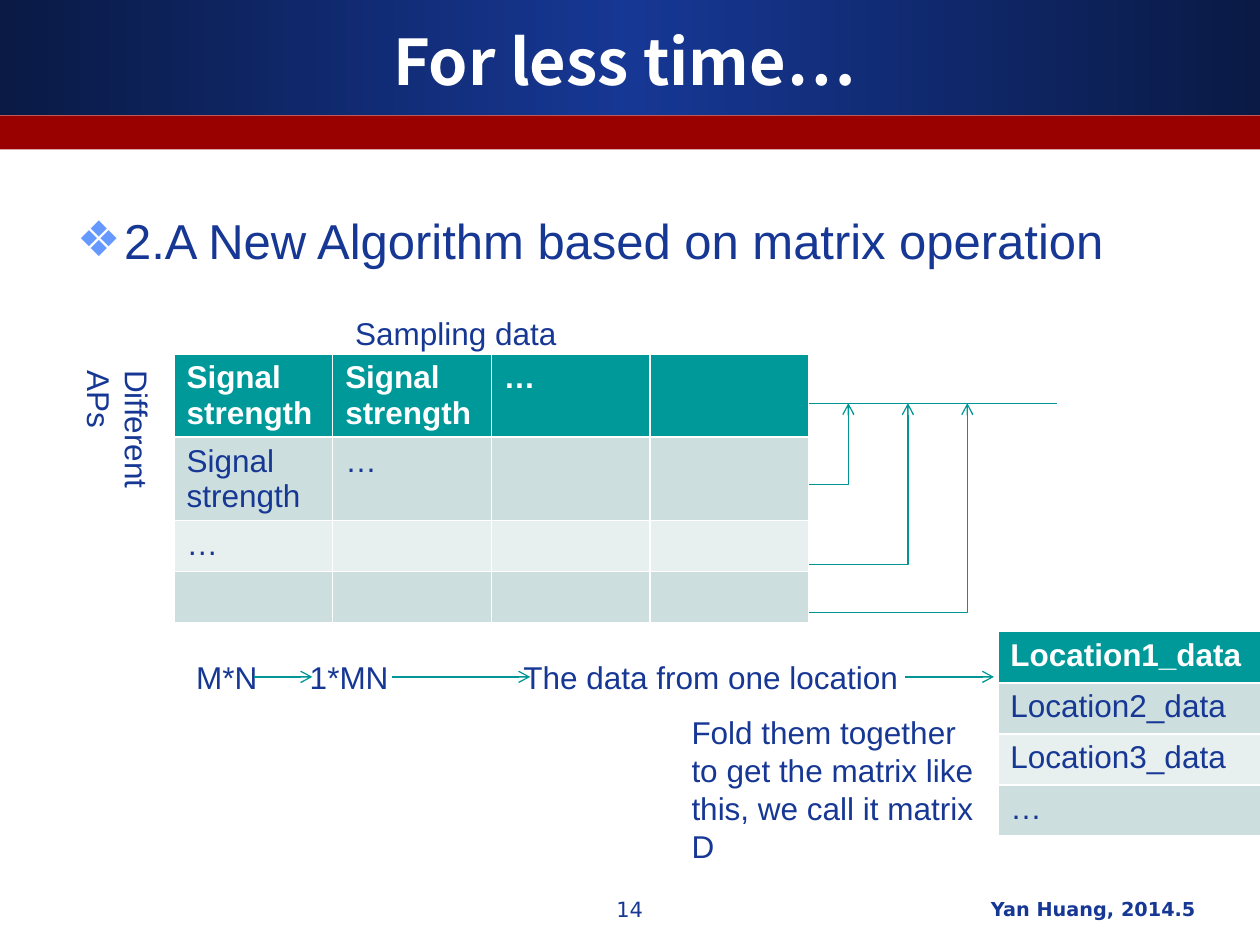
from copy import deepcopy
from lxml import etree
from pptx import Presentation
from pptx.dml.color import RGBColor
from pptx.enum.shapes import MSO_CONNECTOR, MSO_SHAPE
from pptx.enum.text import MSO_ANCHOR, PP_ALIGN
from pptx.oxml.ns import qn
from pptx.util import Pt

RECT = MSO_SHAPE.RECTANGLE
STRAIGHT, ELBOW = MSO_CONNECTOR.STRAIGHT, MSO_CONNECTOR.ELBOW
LEFT, CENTER, RIGHT = PP_ALIGN.LEFT, PP_ALIGN.CENTER, PP_ALIGN.RIGHT
MIDDLE = MSO_ANCHOR.MIDDLE

NAVY, EDGE, MID, RED = "163794", "0A1A45", "163794", "990000"
WHITE, LINE, BULLET = "FFFFFF", "009696", "6699FF"
HEAD, BANDS = "009999", ("CCDEDE", "E7EFEF")
BODY = {"name": "Arial", "size": Pt(18), "bold": False}
HEADER = {**BODY, "bold": True}
TITLE = {"name": "Noto Sans CJK SC", "size": Pt(36), "bold": True}
TOPIC = {**BODY, "size": Pt(28)}
NUMBER = {"name": "DejaVu Sans", "size": Pt(12), "bold": False}
AUTHOR = {"name": "DejaVu Sans", "size": Pt(11), "bold": True}

title = ("For less time…", (23.8, 12.2, 666, 44.6))
topic = ("2.A New Algorithm based on matrix operation", (36.7, 116.6, 683.3, 39.6))
labels = [
    ("Sampling data", (195.8, 175.7, 130.3, 29), BODY, LEFT),
    ("M*N", (105, 372.2, 60, 29), BODY, LEFT),
    ("1*MN", (169.9, 372.2, 70, 29), BODY, LEFT),
    ("The data from one location", (292, 372.2, 357, 29), BODY, LEFT),
    ("Fold them together to get the matrix like this, we call it matrix D",
     (388.1, 404, 180, 94.3), BODY, LEFT),
    ("14", (275.8, 509, 168, 25.2), NUMBER, CENTER),
    ("Yan Huang, 2014.5", (462.2, 509, 228.2, 25.2), AUTHOR, RIGHT),
]
vertical_label = ("Different APs", (56.9, 204.5, 36, 116.6), BODY, LEFT)
signals = [
    ["Signal strength", "Signal strength", "…", ""],
    ["Signal strength", "…", "", ""],
    ["…", "", "", ""],
    ["", "", "", ""],
]
locations = [["Location1_data"], ["Location2_data"], ["Location3_data"], ["…"]]
ROW_H = 29.2
SIGNALS_X, SIGNALS_Y, SIGNALS_COL = 99.4, 202.3, 90.7
LOCATIONS_X, LOCATIONS_Y, LOCATIONS_COL = 570.2, 361, 150
BUS_Y, BUS_END = 230.4, 604
row_exits = [277, 322.6, 350]
FIRST_RISER, RISER_GAP = 484.8, 34
FLOW_Y = 386.8
flow = [(144.9, 178.5), (224, 303), (517, 568)]


def rgb(hex_color):
    return RGBColor.from_string(hex_color)


def format_run(r, style, color):
    for key, value in style.items():
        setattr(r.font, key, value)
    r.font.color.rgb = rgb(color)


def place(sp, box):
    for key, value in zip(("left", "top", "width", "height"), box):
        setattr(sp, key, Pt(value))


def write(tf, text, style, color, align=LEFT):
    p = tf.paragraphs[0]
    p.alignment = align
    r = p.add_run()
    r.text = text
    format_run(r, style, color)
    return p


def add_label(s, text, box, style, align):
    sp = s.shapes.add_textbox(*map(Pt, box))
    sp.text_frame.word_wrap = True
    write(sp.text_frame, text, style, NAVY, align)
    return sp


def add_band(s, box):
    sp = s.shapes.add_shape(RECT, *map(Pt, box))
    sp.shadow.inherit = False
    sp.line.fill.background()
    return sp


def add_line(s, start, end, kind=STRAIGHT, arrow=True):
    c = s.shapes.add_connector(kind, *map(Pt, start + end))
    c.line.color.rgb = rgb(LINE)
    c.line.width = Pt(0.75)
    if arrow:
        etree.SubElement(c.line._get_or_add_ln(), qn("a:tailEnd"), type="arrow")
    props = c._element.spPr
    etree.SubElement(props, qn("a:effectLst"))
    if kind == ELBOW:
        props.find(qn("a:prstGeom")).set("prst", "bentConnector2")


def add_grid(s, rows, left, top, col_w):
    n, m = len(rows), len(rows[0])
    table = s.shapes.add_table(n, m, Pt(left), Pt(top), Pt(col_w * m), Pt(ROW_H * n)).table
    for col in table.columns:
        col.width = Pt(col_w)
    for i, row in enumerate(rows):
        table.rows[i].height = Pt(ROW_H)
        for j, text in enumerate(row):
            cell = table.cell(i, j)
            cell.fill.solid()
            cell.fill.fore_color.rgb = rgb(BANDS[(i - 1) % 2] if i else HEAD)
            if text:
                write(cell.text_frame, text, BODY if i else HEADER, NAVY if i else WHITE)


def add_bullet(p, char, color, indent):
    props = p._p.get_or_add_pPr()
    props.set("marL", str(Pt(indent)))
    props.set("indent", str(-Pt(indent)))
    bullet_color = etree.SubElement(props, qn("a:buClr"))
    etree.SubElement(bullet_color, qn("a:srgbClr"), val=color)
    etree.SubElement(props, qn("a:buFont"), typeface="Arial")
    etree.SubElement(props, qn("a:buChar"), char=char)


def main():
    prs = Presentation()
    prs.slide_width, prs.slide_height = Pt(720), Pt(540)
    s = prs.slides.add_slide(prs.slide_layouts[1])

    banner = add_band(s, (0, 0, 720, 65.5))
    banner.fill.gradient()
    banner.fill.gradient_angle = 0
    stops = banner._element.spPr.find(qn("a:gradFill")).find(qn("a:gsLst"))
    stops.insert(1, deepcopy(stops[0]))
    for stop, position, color in zip(banner.fill.gradient_stops, (0, 0.5, 1), (EDGE, MID, EDGE)):
        stop.position = position
        stop.color.rgb = rgb(color)
    stripe = add_band(s, (0, 66, 720, 19.4))
    stripe.fill.solid()
    stripe.fill.fore_color.rgb = rgb(RED)

    tree = s.shapes._spTree
    for sp, (text, box), style, color, align in (
        (s.shapes.title, title, TITLE, WHITE, CENTER),
        (s.placeholders[1], topic, TOPIC, NAVY, LEFT),
    ):
        place(sp, box)
        tree.append(sp._element)
        p = write(sp.text_frame, text, style, color, align)
    s.shapes.title.text_frame.vertical_anchor = MIDDLE
    p.space_before = Pt(5.6)
    add_bullet(p, "❖", BULLET, 27)

    add_grid(s, signals, SIGNALS_X, SIGNALS_Y, SIGNALS_COL)
    add_grid(s, locations, LOCATIONS_X, LOCATIONS_Y, LOCATIONS_COL)
    for label in labels:
        add_label(s, *label)
    side = add_label(s, *vertical_label)
    side.text_frame._txBody.bodyPr.set("vert", "eaVert")

    edge = SIGNALS_X + SIGNALS_COL * len(signals[0])
    add_line(s, (edge, BUS_Y), (BUS_END, BUS_Y), arrow=False)
    for i, y in enumerate(row_exits):
        add_line(s, (edge, y), (FIRST_RISER + i * RISER_GAP, BUS_Y), ELBOW)
    for x1, x2 in flow:
        add_line(s, (x1, FLOW_Y), (x2, FLOW_Y))
    prs.save("out.pptx")


if __name__ == "__main__":
    main()
